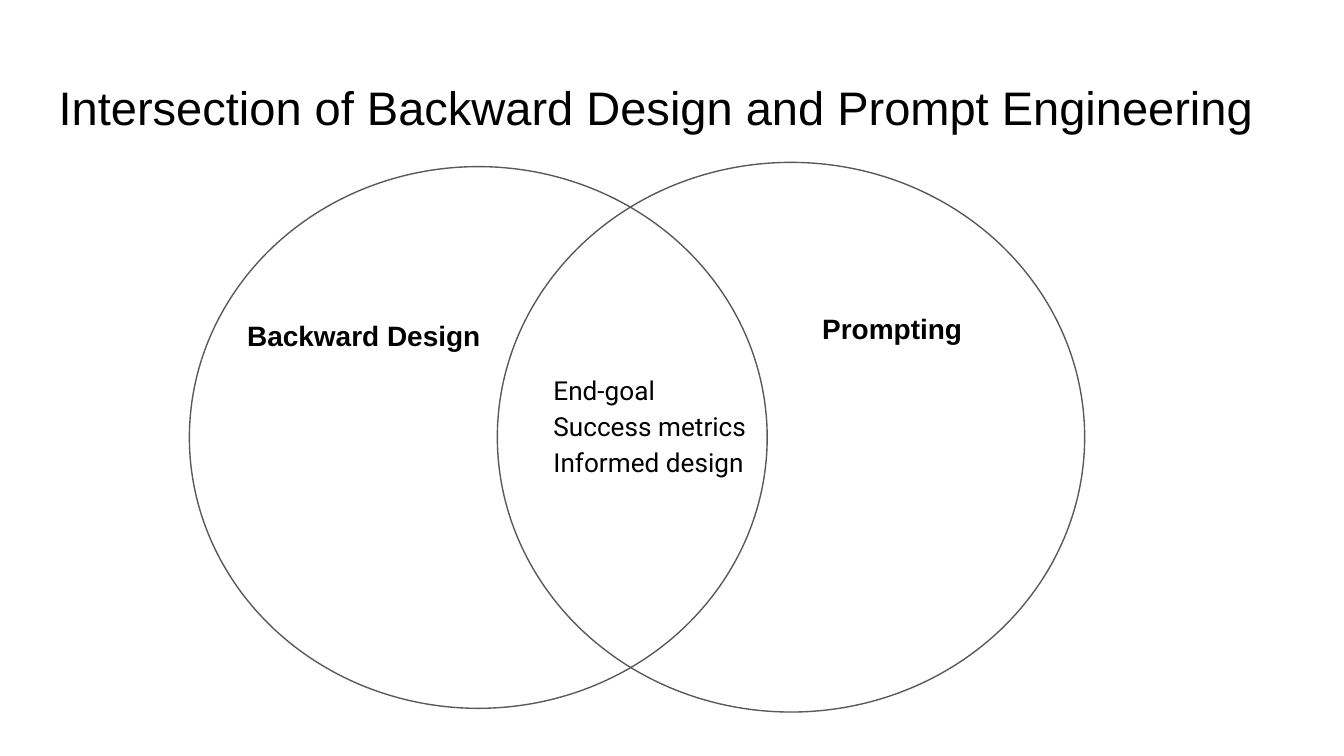
from pptx import Presentation
from pptx.dml.color import RGBColor
from pptx.enum.shapes import MSO_SHAPE as Shape
from pptx.enum.text import MSO_ANCHOR as Anchor
from pptx.util import Cm, Pt

BLACK = RGBColor(0x00, 0x00, 0x00)
WHITE = RGBColor(0xFF, 0xFF, 0xFF)
GRAY = RGBColor(0x59, 0x59, 0x59)
INSET = 0.25

TITLE = "Intersection of Backward Design and Prompt Engineering"
SHARED_IDEAS = ["End-goal", "Success metrics", "Informed design"]
CIRCLES = [(3.58, 3.15, 10.92, 10.24), (9.4, 3.07, 11.1, 10.39)]
CIRCLE_LABELS = [
    ("Backward Design", (4.42, 5.77, 4.98, 1.14)),
    ("Prompting", (15.29, 5.64, 5.97, 1.14)),
]


def add_text(slide, lines, place, size, font="Arial", bold=False,
             anchor=Anchor.TOP, spacing=1.0, bottom=INSET):
    frame = slide.shapes.add_textbox(*map(Cm, place)).text_frame
    frame.word_wrap = True
    frame.vertical_anchor = anchor
    frame.margin_left = frame.margin_right = frame.margin_top = Cm(INSET)
    frame.margin_bottom = Cm(bottom)
    for index, line in enumerate(lines):
        paragraph = frame.add_paragraph() if index else frame.paragraphs[0]
        paragraph.line_spacing = spacing
        run = paragraph.add_run()
        run.text = line
        run.font.name = font
        run.font.size = Pt(size)
        run.font.bold = bold
        run.font.color.rgb = BLACK


def add_circle(slide, place):
    circle = slide.shapes.add_shape(Shape.OVAL, *map(Cm, place))
    circle.shadow.inherit = False
    circle.fill.background()
    circle.line.color.rgb = GRAY
    circle.line.width = Pt(0.75)


def main():
    deck = Presentation()
    deck.slide_width, deck.slide_height = Cm(25.4), Cm(14.29)
    slide = deck.slides.add_slide(deck.slide_layouts[6])
    slide.background.fill.solid()
    slide.background.fill.fore_color.rgb = WHITE

    add_text(slide, [TITLE], (0.86, 1.24, 23.67, 1.6), 25.2)
    add_text(slide, SHARED_IDEAS, (10.21, 5.64, 4.5, 5.26), 14, font="Roboto",
             anchor=Anchor.MIDDLE, spacing=1.15, bottom=0.78)
    for place in CIRCLES:
        add_circle(slide, place)
    for label, place in CIRCLE_LABELS:
        add_text(slide, [label], place, 15, bold=True)

    deck.save("out.pptx")


if __name__ == "__main__":
    main()
